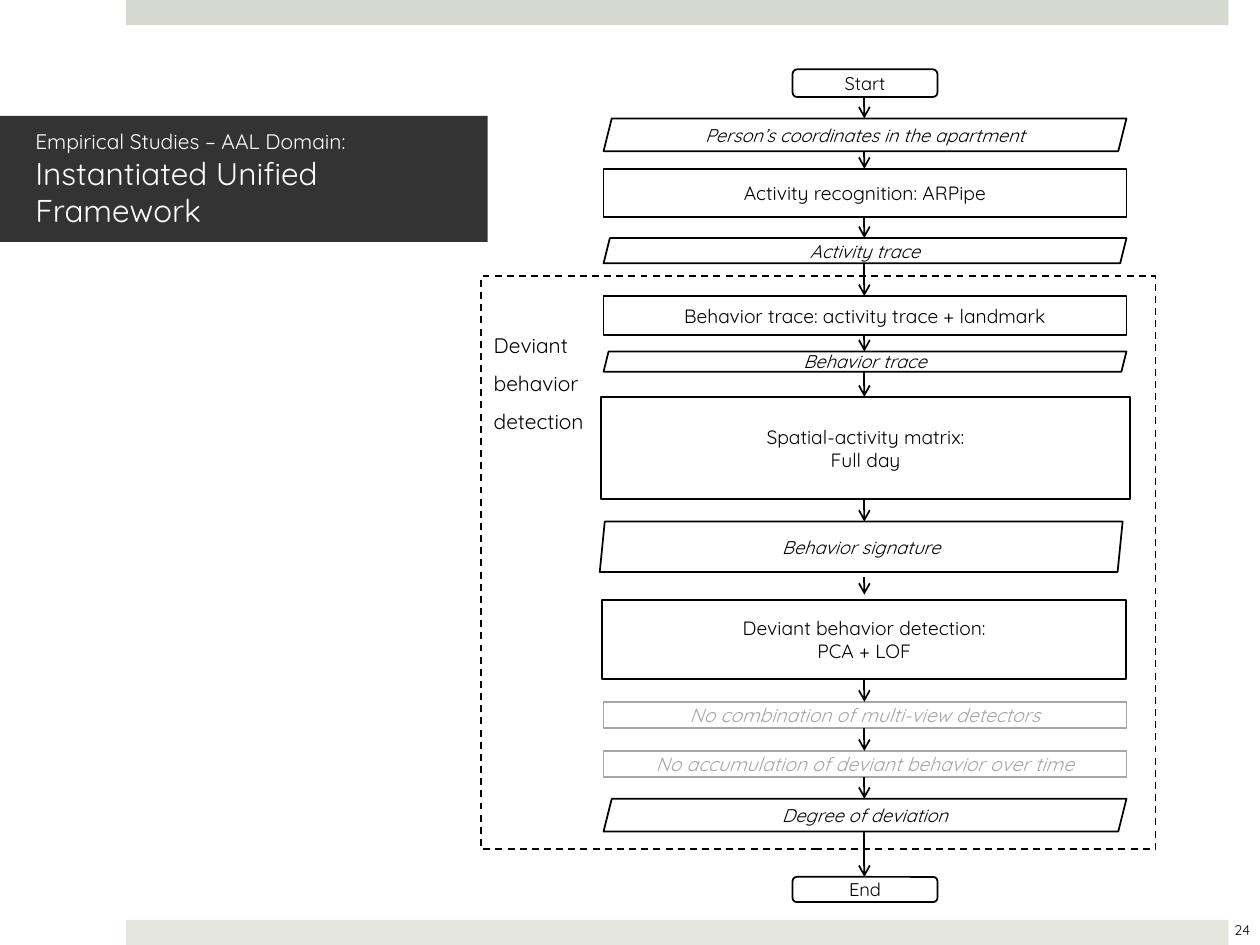
from dataclasses import dataclass
from itertools import pairwise

import pptx
import pptx.dml.color
import pptx.enum.dml
import pptx.enum.shapes
import pptx.enum.text
import pptx.oxml
import pptx.oxml.ns
import pptx.util
from pptx.dml.color import RGBColor
from pptx.util import Inches

BLACK = RGBColor(0x00, 0x00, 0x00)
WHITE = RGBColor(0xFF, 0xFF, 0xFF)
GRAY = RGBColor(0xA6, 0xA6, 0xA6)
CHARCOAL = RGBColor(0x33, 0x33, 0x33)
TOP_BAND = RGBColor(0xD6, 0xD9, 0xCD)
BOTTOM_BAND = RGBColor(0xE4, 0xE6, 0xDE)

SHAPE = pptx.enum.shapes.MSO_SHAPE
ALIGN = pptx.enum.text.PP_ALIGN
ANCHOR = pptx.enum.text.MSO_ANCHOR
FONT = "Quicksand"
FLOW_X = 6.86


@dataclass(frozen=True)
class Box:
    left: float
    top: float
    width: float
    height: float


@dataclass(frozen=True)
class Step:
    kind: SHAPE
    box: Box
    paragraphs: tuple[str, ...]
    size: float = 11
    italic: bool = False
    color: RGBColor = BLACK
    slant: float | None = None
    gap_after: float = 0


def wide_box(top: float, height: float) -> Box:
    return Box(4.79, top, 4.15, height)


def data(text: str, box: Box, slant: float = 0.25, gap_after: float = 0) -> Step:
    return Step(SHAPE.PARALLELOGRAM, box, (text,), 10.5, True,
                slant=slant, gap_after=gap_after)


def process(box: Box, *paragraphs: str) -> Step:
    return Step(SHAPE.RECTANGLE, box, paragraphs)


def omitted(text: str, top: float) -> Step:
    return Step(SHAPE.RECTANGLE, wide_box(top, 0.21), (text,), italic=True, color=GRAY)


def terminal(text: str, top: float, height: float) -> Step:
    return Step(SHAPE.ROUNDED_RECTANGLE, Box(6.29, top, 1.15, height), (text,), 10.5)


STEPS = (
    terminal("Start", 0.55, 0.22),
    data("Person’s coordinates in the apartment", wide_box(0.94, 0.26)),
    process(wide_box(1.34, 0.38), "Activity recognition: ARPipe"),
    data("Activity trace", wide_box(1.89, 0.2)),
    process(wide_box(2.35, 0.31), "Behavior trace: activity trace + landmark"),
    data("Behavior trace", wide_box(2.79, 0.16)),
    process(Box(4.77, 3.15, 4.2, 0.81), "Spatial-activity matrix:\nFull day"),
    data("Behavior signature", Box(4.76, 4.14, 4.15, 0.4), 0.1, 0.04),
    process(Box(4.78, 4.76, 4.16, 0.63), "Deviant behavior detection:", "PCA + LOF"),
    omitted("No combination of multi-view detectors", 5.57),
    omitted("No accumulation of deviant behavior over time", 5.96),
    data("Degree of deviation", wide_box(6.34, 0.26)),
    terminal("End", 6.96, 0.2),
)


def apply(target: object, values: dict[str, object]) -> None:
    for name, value in values.items():
        setattr(target, name, value)


def add_box(slide, kind, box: Box, fill: RGBColor | None = None,
            line: RGBColor | None = None):
    shape = slide.shapes.add_shape(kind, Inches(box.left), Inches(box.top),
                                   Inches(box.width), Inches(box.height))
    shape.shadow.inherit = False
    if fill is None:
        shape.fill.background()
    else:
        shape.fill.solid()
        shape.fill.fore_color.rgb = fill
    if line is None:
        shape.line.fill.background()
    else:
        shape.line.color.rgb = line
        shape.line.width = pptx.util.Pt(1)
    return shape


def style_font(font, size: float, color: RGBColor, italic: bool = False) -> None:
    apply(font, {"name": FONT, "size": pptx.util.Pt(size), "italic": italic})
    font.color.rgb = color


def write(shape, paragraphs: tuple[str, ...], size: float, color: RGBColor = BLACK,
          italic: bool = False, frame_format: dict | None = None,
          paragraph_format: dict | None = None) -> None:
    frame = shape.text_frame
    apply(frame, {"word_wrap": True, "vertical_anchor": ANCHOR.MIDDLE}
          | (frame_format or {}))
    for index, text in enumerate(paragraphs):
        paragraph = frame.add_paragraph() if index else frame.paragraphs[0]
        paragraph.text = text
        apply(paragraph, {"alignment": ALIGN.CENTER} | (paragraph_format or {}))
        for run in paragraph.runs:
            style_font(run.font, size, color, italic)


def add_step(slide, step: Step) -> None:
    shape = add_box(slide, step.kind, step.box, line=step.color)
    if step.slant is not None:
        shape.adjustments[0] = step.slant
    write(shape, step.paragraphs, step.size, step.color, step.italic)


def add_arrow(slide, upper: Step, lower: Step) -> None:
    start = upper.box.top + upper.box.height + upper.gap_after
    end = lower.box.top - upper.gap_after
    arrow = slide.shapes.add_connector(
        pptx.enum.shapes.MSO_CONNECTOR.STRAIGHT,
        Inches(FLOW_X), Inches(start), Inches(FLOW_X), Inches(end))
    arrow.line.color.rgb = BLACK
    arrow.line.width = pptx.util.Pt(1)
    namespace = pptx.oxml.ns.nsdecls("a")
    arrow.line._get_or_add_ln().append(
        pptx.oxml.parse_xml(f'<a:tailEnd {namespace} type="arrow"/>'))
    arrow._element.spPr.append(pptx.oxml.parse_xml(f"<a:effectLst {namespace}/>"))


def add_detection_frame(slide) -> None:
    frame = add_box(slide, SHAPE.RECTANGLE, Box(3.82, 2.19, 5.35, 4.55), line=BLACK)
    frame.line.dash_style = pptx.enum.dml.MSO_LINE.DASH
    write(frame, ("Deviant", "behavior", "detection"), 12,
          frame_format={"vertical_anchor": ANCHOR.TOP, "margin_top": Inches(0.35)},
          paragraph_format={"alignment": ALIGN.LEFT, "line_spacing": 1.5})


def add_title(slide) -> None:
    title = add_box(slide, SHAPE.RECTANGLE, Box(-0.02, 0.92, 3.89, 1), fill=CHARCOAL)
    write(title, ("Empirical Studies – AAL Domain:\nInstantiated Unified Framework",),
          12, WHITE,
          frame_format={"margin_left": Inches(0.3), "margin_right": Inches(0.3)},
          paragraph_format={"alignment": ALIGN.LEFT})
    title.text_frame.paragraphs[0].runs[1].font.size = pptx.util.Pt(18)


def main() -> None:
    presentation = pptx.Presentation()
    apply(presentation, {"slide_width": Inches(10), "slide_height": Inches(7.5)})
    slide = presentation.slides.add_slide(presentation.slide_layouts[6])
    for top, color in ((0, TOP_BAND), (7.3, BOTTOM_BAND)):
        add_box(slide, SHAPE.RECTANGLE, Box(1, top, 8.75, 0.2), fill=color)
    for step in STEPS:
        add_step(slide, step)
    for upper, lower in pairwise(STEPS):
        add_arrow(slide, upper, lower)
    add_detection_frame(slide)
    add_title(slide)
    page_number = slide.shapes.add_textbox(Inches(9.61), Inches(7.18),
                                           Inches(0.5), Inches(0.4))
    write(page_number, ("24",), 8)
    presentation.save("out.pptx")


if __name__ == "__main__":
    main()
